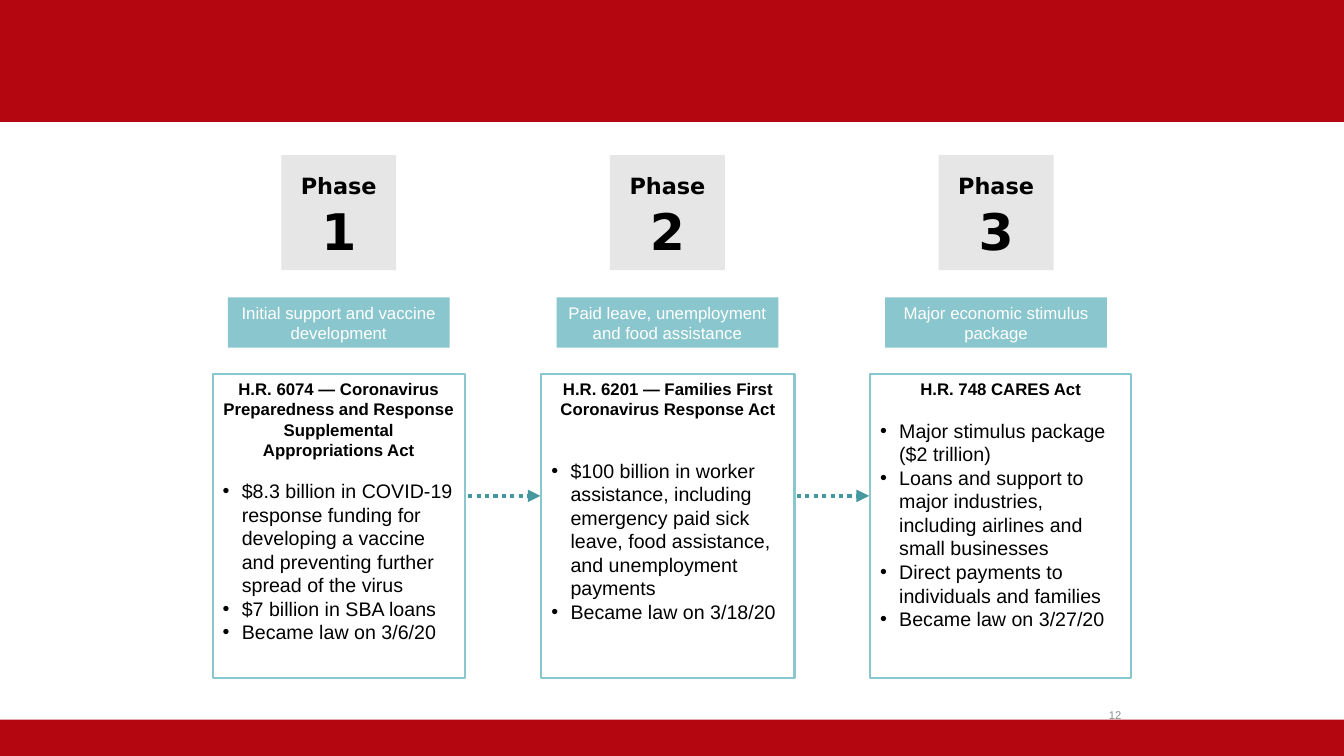
from lxml import etree
from pptx import Presentation
from pptx.dml.color import RGBColor
from pptx.enum.dml import MSO_LINE
from pptx.enum.shapes import MSO_CONNECTOR, MSO_SHAPE
from pptx.enum.text import MSO_ANCHOR, PP_ALIGN
from pptx.oxml.ns import qn
from pptx.util import Inches, Pt

PHASES = [
    {
        "summary": "Initial support and vaccine development",
        "act": "H.R. 6074 — Coronavirus Preparedness and Response Supplemental Appropriations Act",
        "points": [
            "$8.3 billion in COVID-19 response funding for developing a vaccine and preventing further spread of the virus",
            "$7 billion in SBA loans",
            "Became law on 3/6/20",
        ],
        "gap": 14,
        "width": 2.5,
    },
    {
        "summary": "Paid leave, unemployment and food assistance",
        "act": "H.R. 6201 — Families First Coronavirus Response Act",
        "points": [
            "$100 billion in worker assistance, including emergency paid sick leave, food assistance, and unemployment payments",
            "Became law on 3/18/20",
        ],
        "gap": 28,
        "width": 2.51,
    },
    {
        "summary": "Major economic stimulus package",
        "act": "H.R. 748 CARES Act",
        "points": [
            "Major stimulus package ($2 trillion)",
            "Loans and support to major industries, including airlines and small businesses",
            "Direct payments to individuals and families",
            "Became law on 3/27/20",
        ],
        "gap": 14,
        "width": 2.59,
    },
]
PAGE_NUMBER = "12"
COLORS = {
    "band": "B30611",
    "tile": "E6E6E6",
    "teal": "8AC6CD",
    "arrow": "4597A0",
    "white": "FFFFFF",
    "black": "000000",
    "page": "8C8C8C",
}
BODY_FONT, PHASE_FONT = "Arial", "DejaVu Sans"
SLIDE_WIDTH, SLIDE_HEIGHT = 13.33, 7.5
FIRST_CENTER, PITCH = 3.36, 3.26
PANEL_TOP, PANEL_HEIGHT = 3.71, 3.02
ARROW_Y = 4.92


def color(name):
    return RGBColor.from_string(COLORS[name])


def add_block(left, top, width, height, fill, line=None):
    block = slide.shapes.add_shape(
        MSO_SHAPE.RECTANGLE, Inches(left), Inches(top), Inches(width), Inches(height))
    block.shadow.inherit = False
    block.fill.solid()
    block.fill.fore_color.rgb = color(fill)
    if line:
        block.line.color.rgb = color(line)
        block.line.width = Pt(1.5)
    else:
        block.line.fill.background()
    block.text_frame.word_wrap = True
    return block


def write(paragraph, text, size, ink="black", bold=False, font=BODY_FONT, align=PP_ALIGN.CENTER):
    paragraph.text = text
    paragraph.alignment = align
    paragraph.font.name = font
    paragraph.font.size = Pt(size)
    paragraph.font.bold = bold
    paragraph.font.color.rgb = color(ink)


def add_label(left, top, width, height, text, size, **style):
    label = slide.shapes.add_textbox(Inches(left), Inches(top), Inches(width), Inches(height))
    label.text_frame.word_wrap = True
    write(label.text_frame.paragraphs[0], text, size, **style)
    return label


def add_arrow(left, right):
    arrow = slide.shapes.add_connector(
        MSO_CONNECTOR.STRAIGHT, Inches(left), Inches(ARROW_Y), Inches(right), Inches(ARROW_Y))
    arrow.line.color.rgb = color("arrow")
    arrow.line.width = Pt(3)
    arrow.line.dash_style = MSO_LINE.ROUND_DOT
    etree.SubElement(arrow.line._get_or_add_ln(), qn("a:tailEnd"), type="triangle")
    etree.SubElement(arrow._element.spPr, qn("a:effectLst"))


def add_panel(left, phase):
    panel = add_block(left, PANEL_TOP, phase["width"], PANEL_HEIGHT, "white", "teal")
    frame = panel.text_frame
    frame.vertical_anchor = MSO_ANCHOR.TOP
    write(frame.paragraphs[0], phase["act"], 12, bold=True)
    for index, point in enumerate(phase["points"]):
        paragraph = frame.add_paragraph()
        properties = paragraph._p.get_or_add_pPr()
        properties.set("marL", str(Inches(0.19)))
        properties.set("indent", str(-Inches(0.19)))
        etree.SubElement(properties, qn("a:buFont"), typeface=BODY_FONT)
        etree.SubElement(properties, qn("a:buChar"), char="•")
        write(paragraph, point, 14, align=PP_ALIGN.LEFT)
        if index == 0:
            paragraph.space_before = Pt(phase["gap"])


prs = Presentation()
prs.slide_width, prs.slide_height = Inches(SLIDE_WIDTH), Inches(SLIDE_HEIGHT)
slide = prs.slides.add_slide(prs.slide_layouts[6])

add_block(0, 0, SLIDE_WIDTH, 1.21, "band")
add_block(0, 7.14, SLIDE_WIDTH, 0.36, "band")
page = add_label(8.73, 6.89, 2.49, 0.4, PAGE_NUMBER, 8, ink="page", align=PP_ALIGN.RIGHT)
page.text_frame.vertical_anchor = MSO_ANCHOR.MIDDLE

for index, phase in enumerate(PHASES):
    center = FIRST_CENTER + index * PITCH
    panel_left = center - 1.25
    add_block(center - 0.57, 1.54, 1.14, 1.14, "tile")
    add_label(center - 0.36, 1.94, 0.72, 0.71, str(index + 1), 36, bold=True, font=PHASE_FONT)
    add_label(center - 0.8, 1.66, 1.6, 0.37, "Phase", 16, bold=True, font=PHASE_FONT)
    summary = add_block(center - 1.1, 2.95, 2.2, 0.5, "teal")
    summary.text_frame.vertical_anchor = MSO_ANCHOR.MIDDLE
    write(summary.text_frame.paragraphs[0], phase["summary"], 12, ink="white")
    if index < len(PHASES) - 1:
        add_arrow(panel_left + 2.45, panel_left + PITCH - 0.01)
    add_panel(panel_left, phase)

prs.save("out.pptx")
